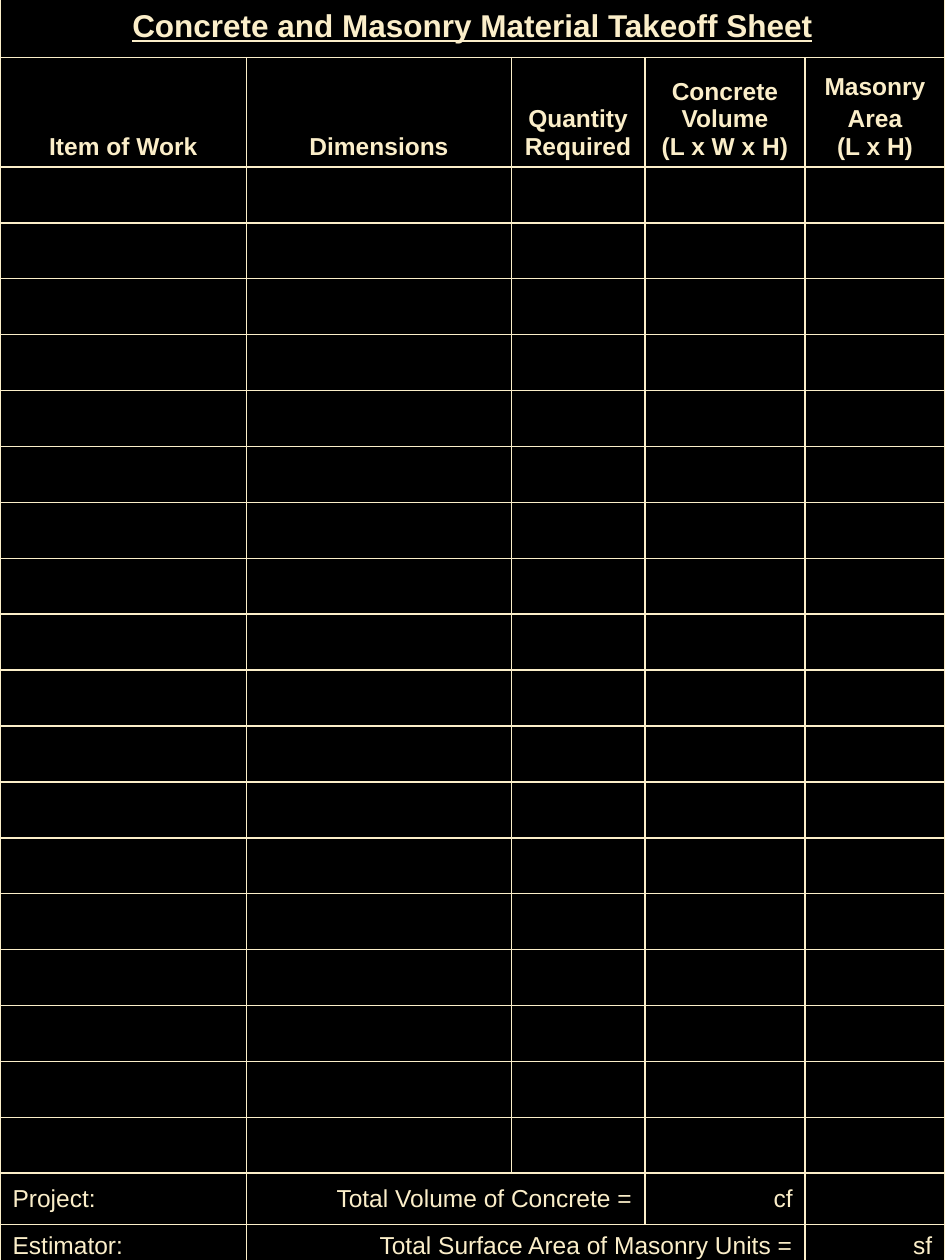
from dataclasses import dataclass, field

from lxml import etree
from pptx import Presentation
from pptx.dml.color import RGBColor
from pptx.enum.text import MSO_ANCHOR, PP_ALIGN
from pptx.oxml.ns import qn
from pptx.table import Table, _Cell
from pptx.util import Pt

LEFT, CENTER, RIGHT = PP_ALIGN.LEFT, PP_ALIGN.CENTER, PP_ALIGN.RIGHT
MIDDLE, BOTTOM = MSO_ANCHOR.MIDDLE, MSO_ANCHOR.BOTTOM


@dataclass(frozen=True)
class Theme:
    ink: str = "FBEEC9"
    paper: str = "000000"
    font: str = "Arial"
    title: float = 18
    body: float = 14
    border: float = 1


@dataclass(frozen=True)
class Line:
    text: str
    indent: float = 0
    before: float = 2.8


@dataclass(frozen=True)
class Entry:
    row: int
    col: int
    lines: tuple[Line, ...]
    align: PP_ALIGN
    anchor: MSO_ANCHOR = MIDDLE
    span: int = 1
    size: float = 14
    style: dict = field(default_factory=dict)


THEME = Theme()
TOP = -3
BLANK_ROWS = 18
COLUMNS = [141, 151.2, 76.3, 91.7, 79.8]
ROWS = [36, 62.4] + [31.95] * BLANK_ROWS + [24.5] * 2
PROJECT = 2 + BLANK_ROWS
ESTIMATOR = PROJECT + 1

HEADERS = [
    (Line("Item of Work"),),
    (Line("Dimensions"),),
    (Line("Quantity Required"),),
    (Line("Concrete"), Line("Volume\v(L x W x H)", indent=-12, before=0)),
    (Line("Masonry", indent=-4.6), Line("Area\v(L x H)", indent=-19.4)),
]

ENTRIES = [
    Entry(0, 0, (Line("Concrete and Masonry Material Takeoff Sheet"),), CENTER,
          span=5, size=THEME.title, style={"bold": True, "underline": True}),
    *(Entry(1, col, lines, CENTER, BOTTOM, size=THEME.body, style={"bold": True})
      for col, lines in enumerate(HEADERS)),
    Entry(PROJECT, 0, (Line("Project:"),), LEFT),
    Entry(PROJECT, 1, (Line("Total Volume of Concrete ="),), RIGHT, span=2),
    Entry(PROJECT, 3, (Line("cf"),), RIGHT),
    Entry(ESTIMATOR, 0, (Line("Estimator:"),), LEFT),
    Entry(ESTIMATOR, 1, (Line("Total Surface Area of Masonry Units ="),), RIGHT, span=3),
    Entry(ESTIMATOR, 4, (Line("sf"),), RIGHT),
]


def style_cell(cell: _Cell) -> None:
    cell.fill.solid()
    cell.fill.fore_color.rgb = RGBColor.from_string(THEME.paper)
    props = cell._tc.get_or_add_tcPr()
    for index, side in enumerate(("a:lnL", "a:lnR", "a:lnT", "a:lnB")):
        border = etree.Element(qn(side), w=str(Pt(THEME.border)))
        fill = etree.SubElement(border, qn("a:solidFill"))
        etree.SubElement(fill, qn("a:srgbClr"), val=THEME.ink)
        props.insert(index, border)


def write_entry(table: Table, entry: Entry) -> None:
    cell = table.cell(entry.row, entry.col)
    if entry.span > 1:
        cell.merge(table.cell(entry.row, entry.col + entry.span - 1))
    cell.vertical_anchor = entry.anchor
    tf = cell.text_frame
    font_values = {"name": THEME.font, "size": Pt(entry.size), **entry.style}
    for index, line in enumerate(entry.lines):
        p = tf.paragraphs[0] if index == 0 else tf.add_paragraph()
        p.text = line.text
        p.alignment = entry.align
        p.space_before = Pt(line.before)
        if line.indent:
            p._p.get_or_add_pPr().set("indent", str(Pt(line.indent)))
        for r in p.runs:
            for name, value in {"bold": False, **font_values}.items():
                setattr(r.font, name, value)
            r.font.color.rgb = RGBColor.from_string(THEME.ink)


def main() -> None:
    prs = Presentation()
    prs.slide_width, prs.slide_height = Pt(540), Pt(720)
    s = prs.slides.add_slide(prs.slide_layouts[6])
    frame = s.shapes.add_table(len(ROWS), len(COLUMNS), Pt(0), Pt(TOP),
                               Pt(sum(COLUMNS)), Pt(sum(ROWS)))
    table = frame.table
    for name, value in {"first_row": False, "horz_banding": False}.items():
        setattr(table, name, value)
    for column, width in zip(table.columns, COLUMNS):
        column.width = Pt(width)
    for row, height in zip(table.rows, ROWS):
        row.height = Pt(height)
    for cell in table.iter_cells():
        style_cell(cell)
    for entry in ENTRIES:
        write_entry(table, entry)
    prs.save("out.pptx")


if __name__ == "__main__":
    main()
